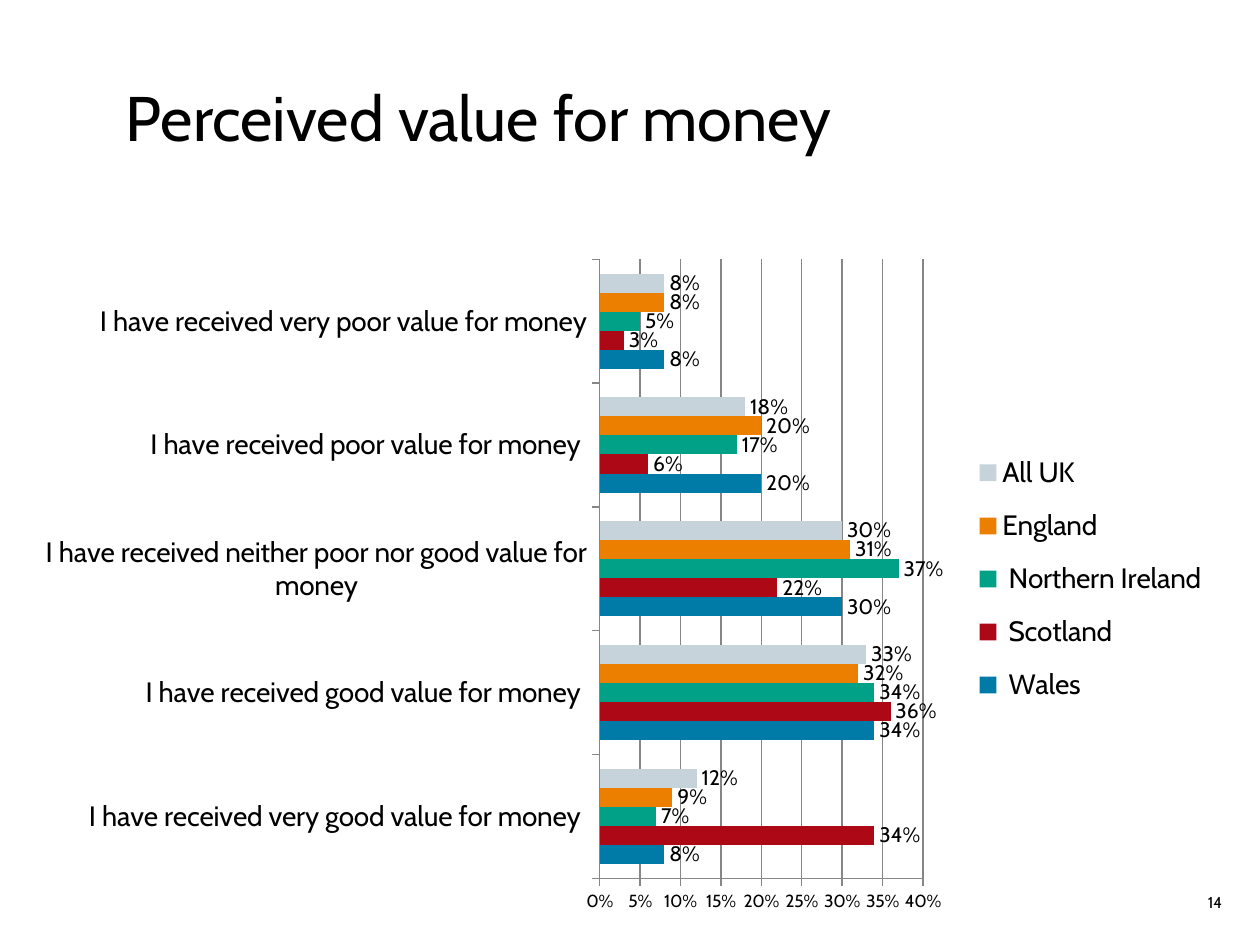
from dataclasses import dataclass

from pptx import Presentation
from pptx.chart.data import CategoryChartData as ChartData
from pptx.dml.color import RGBColor as Color
from pptx.enum.chart import XL_CHART_TYPE as ChartType
from pptx.enum.chart import XL_LABEL_POSITION as LabelPosition
from pptx.enum.chart import XL_LEGEND_POSITION as LegendPosition
from pptx.enum.chart import XL_TICK_MARK as TickMark
from pptx.enum.text import MSO_ANCHOR as Anchor
from pptx.enum.text import PP_ALIGN as Align
from pptx.oxml import parse_xml
from pptx.oxml.ns import nsdecls
from pptx.util import Inches, Pt


@dataclass(frozen=True)
class Theme:
    font: str = "Cabin"
    ink: str = "000000"
    grid: str = "868686"
    title: int = 36
    category: int = 16
    label: int = 12
    axis: int = 10
    footer: int = 9


THEME = Theme()
WIDTH, HEIGHT = Inches(10), Inches(7.5)

CATEGORIES = [
    "I have received very good value for money ",
    "I have received good value for money ",
    "I have received neither poor nor good value for money",
    "I have received poor value for money ",
    "I have received very poor value for money",
]
NATIONS = [
    (" Wales", "007AA6", (0.08, 0.34, 0.3, 0.2, 0.08)),
    (" Scotland", "AD0816", (0.34, 0.36, 0.22, 0.06, 0.03)),
    (" Northern Ireland", "00A186", (0.07, 0.34, 0.37, 0.17, 0.05)),
    ("England", "EC7E00", (0.09, 0.32, 0.31, 0.2, 0.08)),
    ("All UK", "C6D3DB", (0.12, 0.33, 0.3, 0.18, 0.08)),
]


def place(left, top, width, height):
    return (int(WIDTH * left), int(HEIGHT * top),
            int(WIDTH * width), int(HEIGHT * height))


def style_font(font, size):
    font.name = THEME.font
    font.size = Pt(size)
    font.bold = False
    font.color.rgb = Color.from_string(THEME.ink)


def add_text(slide, area, text, size, align, anchor, right_inset=0.1):
    box = slide.shapes.add_textbox(*place(*area))
    frame = box.text_frame
    frame.word_wrap = True
    frame.vertical_anchor = anchor
    frame.margin_right = Inches(right_inset)
    para = frame.paragraphs[0]
    para.text = text
    para.alignment = align
    style_font(para.font, size)


def set_layout(parent, index, area, inner=False):
    for old in parent.xpath("c:layout"):
        parent.remove(old)
    target = '<c:layoutTarget val="inner"/>' if inner else ""
    modes = "".join(f'<c:{name}Mode val="edge"/>' for name in "xy")
    sizes = "".join(f'<c:{name} val="{share}"/>' for name, share in zip("xywh", area))
    parent.insert(index, parse_xml(
        f'<c:layout {nsdecls("c")}><c:manualLayout>{target}{modes}{sizes}'
        "</c:manualLayout></c:layout>"))


def style_axis(axis, size):
    style_font(axis.tick_labels.font, size)
    axis.major_tick_mark = TickMark.OUTSIDE
    axis.minor_tick_mark = TickMark.NONE
    axis.format.line.color.rgb = Color.from_string(THEME.grid)


def style_series(series, colour):
    series.invert_if_negative = False
    series.format.fill.solid()
    series.format.fill.fore_color.rgb = Color.from_string(colour)
    labels = series.data_labels
    labels.show_value = True
    labels.number_format = "0%"
    labels.number_format_is_linked = False
    labels.position = LabelPosition.OUTSIDE_END
    style_font(labels.font, THEME.label)


def add_legend(chart):
    chart.has_legend = True
    legend = chart.legend
    legend.position = LegendPosition.RIGHT
    legend.include_in_layout = False
    style_font(legend.font, THEME.category)
    set_layout(chart.element.xpath("c:chart/c:legend")[0], 1, (0.79, 0.28, 0.2, 0.42))


def add_bar_chart(slide, area):
    data = ChartData(number_format="0%")
    data.categories = CATEGORIES
    for name, _, values in NATIONS:
        data.add_series(name, values)
    chart = slide.shapes.add_chart(ChartType.BAR_CLUSTERED, *place(*area), data).chart
    chart.has_title = False
    style_font(chart.font, THEME.axis)
    plot = chart.plots[0]
    plot.gap_width = 150
    plot.overlap = 0
    plot.vary_by_categories = False
    for series, (_, colour, _) in zip(plot.series, NATIONS):
        style_series(series, colour)
    style_axis(chart.category_axis, THEME.category)
    values = chart.value_axis
    style_axis(values, THEME.axis)
    values.minimum_scale, values.maximum_scale, values.major_unit = 0, 0.4, 0.05
    values.tick_labels.number_format = "0%"
    values.tick_labels.number_format_is_linked = False
    values.has_major_gridlines = True
    values.major_gridlines.format.line.color.rgb = Color.from_string(THEME.grid)
    plot_area = chart.element.xpath("c:chart/c:plotArea")[0]
    set_layout(plot_area, 0, (0.48, 0.02, 0.27, 0.91), inner=True)
    add_legend(chart)


def main():
    deck = Presentation()
    deck.slide_width, deck.slide_height = WIDTH, HEIGHT
    slide = deck.slides.add_slide(deck.slide_layouts[6])
    add_text(slide, (0.93, 0.93, 0.04, 0.05), "14", THEME.footer,
             Align.RIGHT, Anchor.MIDDLE, right_inset=0)
    add_text(slide, (0.09, 0.07, 0.9, 0.1), "Perceived value for money",
             THEME.title, Align.LEFT, Anchor.BOTTOM)
    add_bar_chart(slide, (0.02, 0.26, 0.95, 0.72))
    deck.save("out.pptx")


if __name__ == "__main__":
    main()
